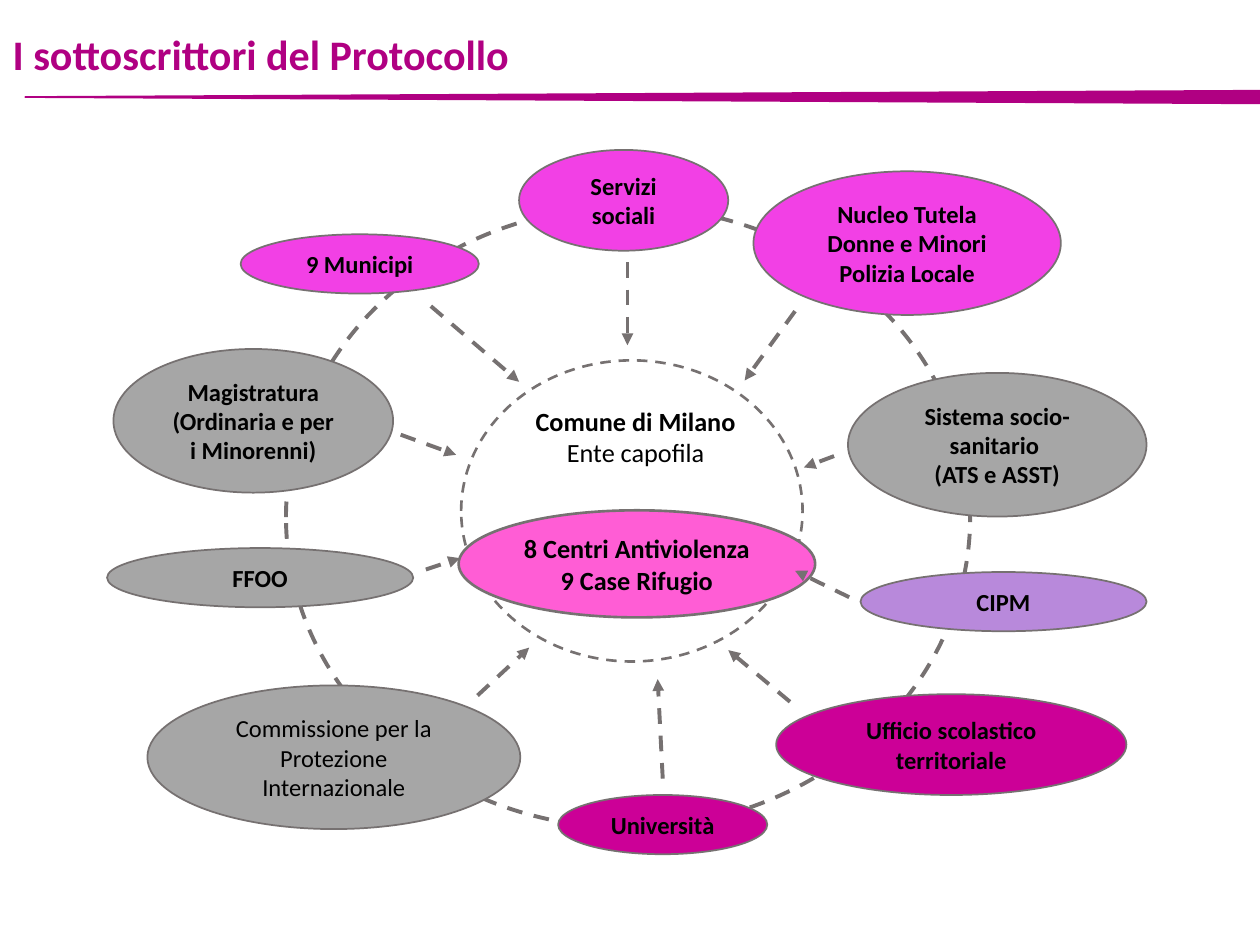
from lxml.etree import SubElement
from pptx import Presentation
from pptx.dml.color import RGBColor
from pptx.enum.dml import MSO_LINE
from pptx.enum.shapes import MSO_CONNECTOR, MSO_SHAPE
from pptx.enum.text import MSO_ANCHOR, PP_ALIGN
from pptx.oxml.ns import qn
from pptx.util import Inches, Pt

PLUM = RGBColor(0xB0, 0x00, 0x82)
MAGENTA = RGBColor(0xCC, 0x00, 0x97)
FUCHSIA = RGBColor(0xF2, 0x40, 0xE5)
PINK = RGBColor(0xFF, 0x5D, 0xD5)
LILAC = RGBColor(0xB8, 0x89, 0xDB)
SILVER = RGBColor(0xA6, 0xA6, 0xA6)
GRAY = RGBColor(0x76, 0x71, 0x71)
BLACK = RGBColor(0x00, 0x00, 0x00)
WHITE = RGBColor(0xFF, 0xFF, 0xFF)

COLUMNS, ROWS = 100, 75

SIGNATORIES = [
    ((44.3, 63.1, 16.6, 4.7), MAGENTA, ["Università"], True),
    ((8.5, 43.5, 24.3, 4.7), SILVER, ["FFOO"], True),
    ((9, 27.7, 22.2, 11.4), SILVER, ["Magistratura (Ordinaria e per i Minorenni)"], True),
    ((59.8, 13.6, 24.4, 11.4), FUCHSIA, ["Nucleo Tutela Donne e Minori Polizia Locale"], True),
    ((41.2, 11.9, 16.6, 8), FUCHSIA, ["Servizi sociali"], True),
    ((67.3, 29.6, 23.7, 11.4), SILVER, ["Sistema socio-sanitario ", "(ATS e ASST)"], True),
    ((19.1, 18.6, 18.9, 4.7), FUCHSIA, ["9 Municipi"], True),
    ((68.3, 45.4, 22.7, 4.7), LILAC, ["CIPM"], True),
    ((61.6, 55.1, 27.8, 8), MAGENTA, ["Ufficio scolastico territoriale"], True),
    ((11.7, 54.4, 29.6, 11.4), SILVER, ["Commissione per la Protezione Internazionale"], False),
]

ARROWS = [
    ((34.2, 24.3), (41.2, 30.3)),
    ((49.8, 20.8), (49.8, 27.4)),
    ((63.1, 24.7), (59.1, 30.2)),
    ((66.2, 36.2), (63.8, 37.1)),
    ((67.4, 47.4), (63.1, 45.3)),
    ((62.7, 55.7), (57.8, 51.6)),
    ((52.6, 61.8), (52.2, 53.9)),
    ((37.9, 55.2), (42, 51.4)),
    ((33.8, 45.2), (36.5, 44.3)),
    ((31.8, 34.5), (36.2, 36.1)),
]


class Canvas:
    font_name = "Calibri"

    def __init__(self, deck):
        self.column = deck.slide_width / COLUMNS
        self.row = deck.slide_height / ROWS
        self.page = deck.slides.add_slide(deck.slide_layouts[5])

    def point(self, x, y):
        return round(x * self.column), round(y * self.row)

    def area(self, left, top, width, height):
        return *self.point(left, top), *self.point(width, height)

    def style(self, para, size, bold, color=BLACK, align=PP_ALIGN.CENTER):
        para.alignment = align
        para.font.name = self.font_name
        para.font.size = Pt(size)
        para.font.bold = bold
        para.font.color.rgb = color

    def fill_text(self, box, lines, size, weights, side_inset=0.1):
        frame = box.text_frame
        frame.word_wrap = True
        frame.vertical_anchor = MSO_ANCHOR.MIDDLE
        frame.margin_left = frame.margin_right = Inches(side_inset)
        for index, (line, bold) in enumerate(zip(lines, weights)):
            para = frame.add_paragraph() if index else frame.paragraphs[0]
            para.text = line
            self.style(para, size, bold)

    def title(self, area, text):
        box = self.page.shapes.title
        box.left, box.top, box.width, box.height = self.area(*area)
        frame = box.text_frame
        frame.text = text
        frame.word_wrap = True
        frame.vertical_anchor = MSO_ANCHOR.MIDDLE
        para = frame.paragraphs[0]
        para.line_spacing = 0.9
        self.style(para, 24, True, PLUM, PP_ALIGN.LEFT)

    def shape(self, kind, area, fill, line_color=GRAY, line_width=1, dashed=False):
        shape = self.page.shapes.add_shape(kind, *self.area(*area))
        shape.shadow.inherit = False
        if fill is None:
            shape.fill.background()
        else:
            shape.fill.solid()
            shape.fill.fore_color.rgb = fill
        shape.line.color.rgb = line_color
        shape.line.width = Pt(line_width)
        if dashed:
            shape.line.dash_style = MSO_LINE.DASH
        return shape

    def ellipse(self, area, fill, line_width=1, dashed=False):
        return self.shape(MSO_SHAPE.OVAL, area, fill, GRAY, line_width, dashed)

    def wedge(self, area):
        wedge = self.shape(MSO_SHAPE.FLOWCHART_EXTRACT, area, PLUM, PLUM)
        wedge.rotation = 270

    def label(self, area, lines, size, weights):
        box = self.page.shapes.add_textbox(*self.area(*area))
        self.fill_text(box, lines, size, weights)

    def arrow(self, start, end):
        arrow = self.page.shapes.add_connector(
            MSO_CONNECTOR.STRAIGHT, *self.point(*start), *self.point(*end))
        arrow.line.color.rgb = GRAY
        arrow.line.width = Pt(2.25)
        arrow.line.dash_style = MSO_LINE.DASH
        properties = arrow._element.spPr
        SubElement(properties.find(qn("a:ln")), qn("a:tailEnd"), type="triangle")
        SubElement(properties, qn("a:effectLst"))


def main():
    deck = Presentation()
    deck.slide_width, deck.slide_height = Inches(10), Inches(7.5)
    canvas = Canvas(deck)

    canvas.title((0, 1.6, 99.8, 5.9), "I sottoscrittori del Protocollo")
    canvas.wedge((50.5, -41.3, 1, 98))

    canvas.ellipse((36.6, 28.6, 27.1, 23.9), WHITE, 1.5, dashed=True)
    canvas.label((39.8, 31.6, 21.3, 6.1), ["Comune di Milano", "Ente capofila"], 15, [True, False])
    centers = canvas.ellipse((36.4, 40.5, 28.3, 8.5), PINK, 1.5)
    canvas.fill_text(centers, ["8 Centri Antiviolenza", "9 Case Rifugio"], 15, [True, True], side_inset=0.05)

    canvas.ellipse((22.7, 16.4, 54.3, 49.3), None, 2.25, dashed=True)
    for area, fill, lines, bold in SIGNATORIES:
        canvas.fill_text(canvas.ellipse(area, fill), lines, 14, [bold] * len(lines))
    for start, end in ARROWS:
        canvas.arrow(start, end)

    deck.save("out.pptx")


if __name__ == "__main__":
    main()
